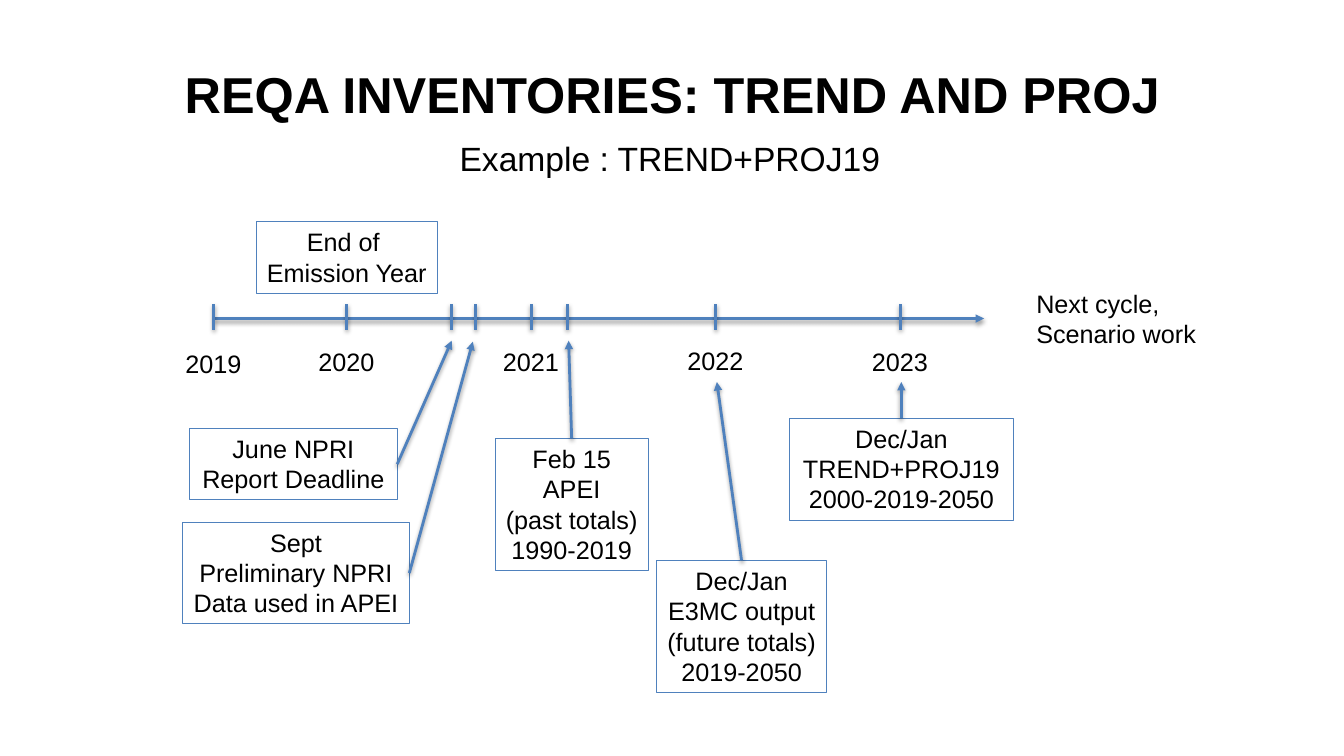
from lxml.etree import SubElement as Sub
from pptx import Presentation
from pptx.dml.color import RGBColor as RGB
from pptx.enum.shapes import MSO_CONNECTOR as Link, MSO_SHAPE as Form
from pptx.enum.text import MSO_ANCHOR as Anchor, MSO_AUTO_SIZE as Fit, PP_ALIGN as Align
from pptx.oxml.ns import qn
from pptx.util import Inches, Pt

HUES = {"ink": "000000", "blue": "4F81BD"}
TOP, RIGHT = 0, 3


class Board:
    font = "Arial"

    def __init__(self, deck):
        self.slide = deck.slides.add_slide(deck.slide_layouts[5])
        self.shapes = self.slide.shapes

    def hue(self, name):
        return RGB.from_string(HUES[name])

    def fill_text(self, shape, text, size, align, bold=False, anchor=Anchor.TOP, wrap=False):
        frame = shape.text_frame
        frame.text = text
        frame.word_wrap = wrap
        frame.auto_size = Fit.NONE
        frame.vertical_anchor = anchor
        for para in frame.paragraphs:
            para.alignment = align
            for run in para.runs:
                run.font.name = self.font
                run.font.size = Pt(size)
                run.font.bold = bold
                run.font.color.rgb = self.hue("ink")

    def title(self, text, x, y, w, h):
        head = self.shapes.title
        head.left, head.top, head.width, head.height = map(Inches, (x, y, w, h))
        self.fill_text(head, text, 36, Align.CENTER, True, Anchor.MIDDLE, True)

    def label(self, text, x, y, w, h=0.4, size=18):
        area = self.shapes.add_textbox(*map(Inches, (x, y, w, h)))
        self.fill_text(area, text, size, Align.LEFT)

    def box(self, text, x, y, w, h):
        rect = self.shapes.add_shape(Form.RECTANGLE, *map(Inches, (x, y, w, h)))
        rect.shadow.inherit = False
        rect.fill.background()
        rect.line.color.rgb = self.hue("blue")
        rect.line.width = Pt(0.75)
        self.fill_text(rect, text, 18, Align.CENTER)
        return rect

    def line(self, x1, y1, x2, y2, arrow=False):
        rule = self.shapes.add_connector(Link.STRAIGHT, *map(Inches, (x1, y1, x2, y2)))
        rule.line.color.rgb = self.hue("blue")
        rule.line.width = Pt(2)
        if arrow:
            Sub(rule.line._ln, qn("a:tailEnd"), type="triangle")
        # Soft shadow straight below the line
        group = Sub(rule._element.spPr, qn("a:effectLst"))
        cast = Sub(group, qn("a:outerShdw"), blurRad=str(Pt(3.1)), dist=str(Pt(1.6)),
                   dir="5400000", rotWithShape="0")
        tint = Sub(cast, qn("a:srgbClr"), val=HUES["ink"])
        Sub(tint, qn("a:alpha"), val="38000")
        return rule

    def point(self, rect, side, x, y):
        rule = self.line(x, y, x, y, True)
        rule.begin_connect(rect, side)


def main():
    deck = Presentation()
    deck.slide_width, deck.slide_height = Inches(13.33), Inches(7.5)
    board = Board(deck)

    # Headings
    board.title("REQA INVENTORIES: TREND AND PROJ", 0.67, 0.3, 12, 1.25)
    board.label("Example : TREND+PROJ19", 4.46, 1.32, 4.42, 0.5, 24)

    # Time axis with year and event ticks
    board.line(2.12, 3.16, 9.76, 3.16, True)
    years = [("2019", 2.12, 3.41), ("2020", 3.44, 3.39), ("2021", 5.27, 3.39),
             ("2022", 7.1, 3.38), ("2023", 8.93, 3.39)]
    for year, x, y in years:
        board.label(year, x - 0.38, y, 0.76)
    for x in [x for _, x, _ in years] + [4.48, 4.72, 5.63]:
        board.line(x, 3.02, x, 3.27)

    # Notes beside the axis
    board.box("End of \vEmission Year", 2.54, 2.2, 1.8, 0.71)
    board.label("Next cycle,\vScenario work", 10.18, 2.81, 1.8, 0.71)

    # Events: text, box, side the arrow leaves, arrow tip
    events = [
        ("June NPRI\nReport Deadline", (1.88, 4.25, 2.06, 0.71), RIGHT, (4.48, 3.38)),
        ("Sept\nPreliminary NPRI\nData used in APEI", (1.81, 5.18, 2.25, 1.01),
         RIGHT, (4.69, 3.39)),
        ("Feb 15\nAPEI\n(past totals)\v1990-2019", (4.91, 4.35, 1.52, 1.31),
         TOP, (5.64, 3.38)),
        ("Dec/Jan\nE3MC output\n(future totals)\v2019-2050", (6.51, 5.56, 1.69, 1.31),
         TOP, (7.11, 3.79)),
        ("Dec/Jan\nTREND+PROJ19\v2000-2019-2050", (7.83, 4.15, 2.22, 1.01),
         TOP, (8.94, 3.79)),
    ]
    for text, place, side, tip in events:
        board.point(board.box(text, *place), side, *tip)

    deck.save("out.pptx")


if __name__ == "__main__":
    main()
